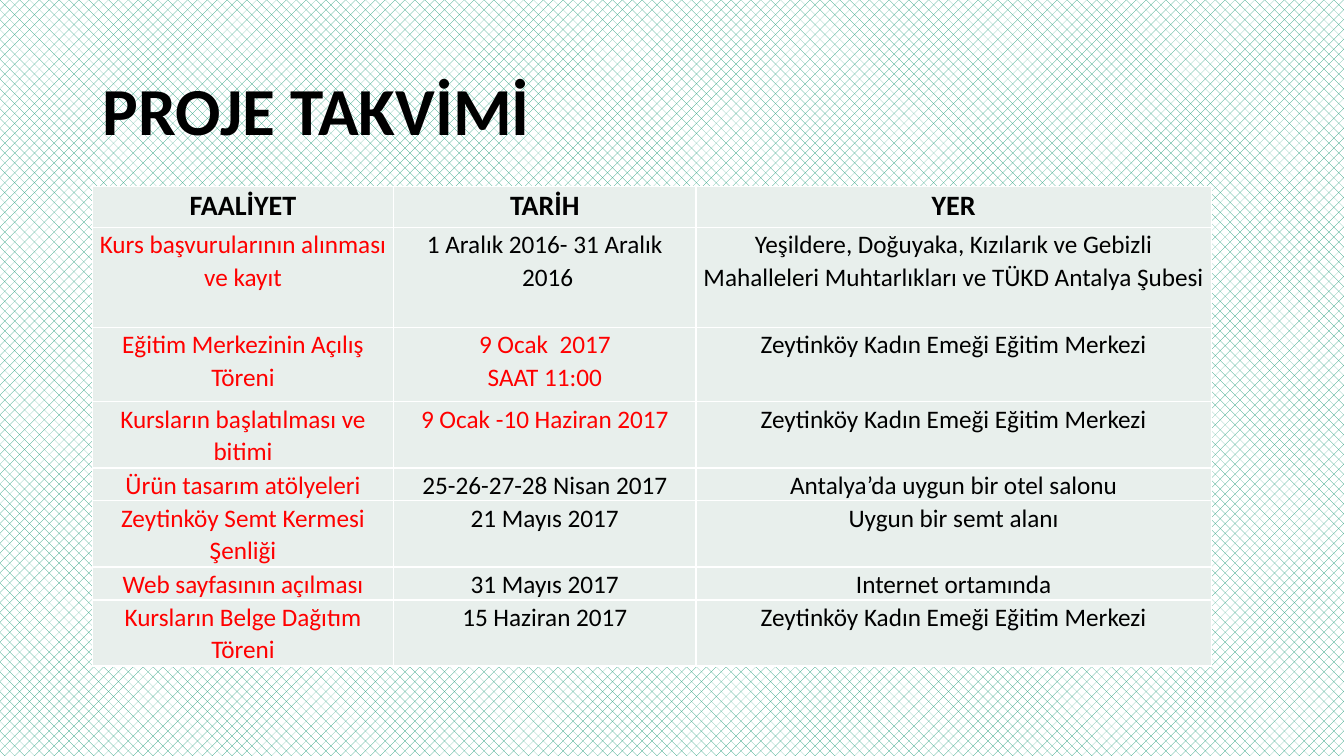
"""Build the project calendar slide with its title and activity table."""
from dataclasses import dataclass

from lxml import etree
from pptx import Presentation
from pptx.dml.color import RGBColor
from pptx.enum.dml import MSO_PATTERN
from pptx.enum.text import MSO_ANCHOR, MSO_AUTO_SIZE, PP_ALIGN
from pptx.oxml.ns import qn
from pptx.util import Pt

CENTER, LEFT = PP_ALIGN.CENTER, PP_ALIGN.LEFT
MIDDLE, NO_FIT = MSO_ANCHOR.MIDDLE, MSO_AUTO_SIZE.NONE
PATTERN = MSO_PATTERN.PERCENT_30
FONT = "Calibri"
COLORS = {
    "text": "000000",
    "highlight": "FF0000",
    "cell": "E8EFEC",
    "border": "FFFFFF",
    "pattern": "1D9A78",
    "paper": "FFFFFF",
}
COLUMN_WIDTHS = (215.2, 216, 368)
HEADERS = ("FAALİYET", "TARİH", "YER")
HEADER_HEIGHT = 29.4
CENTRE_NAME = "Zeytinköy Kadın Emeği Eğitim Merkezi"


@dataclass(frozen=True)
class Activity:
    """One row of the calendar."""

    name: str
    date: str
    place: str
    height: float
    date_color: str = "text"


ACTIVITIES = (
    Activity("Kurs başvurularının alınması ve kayıt", "1 Aralık 2016- 31 Aralık\n 2016",
             "Yeşildere, Doğuyaka, Kızılarık ve Gebizli Mahalleleri Muhtarlıkları "
             "ve TÜKD Antalya Şubesi", 71.3),
    Activity("Eğitim Merkezinin Açılış Töreni", "9 Ocak  2017\nSAAT 11:00",
             CENTRE_NAME, 53.2, "highlight"),
    Activity("Kursların başlatılması ve bitimi", "9 Ocak -10 Haziran 2017",
             CENTRE_NAME, 47.2, "highlight"),
    Activity("Ürün tasarım atölyeleri", "25-26-27-28 Nisan 2017",
             "Antalya’da uygun bir otel salonu", 23.4),
    Activity("Zeytinköy Semt Kermesi Şenliği", "21 Mayıs 2017", "Uygun bir semt alanı", 47.2),
    Activity("Web sayfasının açılması", "31 Mayıs 2017", "Internet ortamında", 23.4),
    Activity("Kursların Belge Dağıtım Töreni", "15 Haziran 2017", CENTRE_NAME, 47.2),
)


def rgb(name: str) -> RGBColor:
    """Return the named colour."""
    return RGBColor.from_string(COLORS[name])


def write_text(text_frame, text: str, *, size: float = 18, color: str = "text",
               bold: bool = False, align=CENTER, spacing: float = 1.07) -> None:
    """Fill a text frame with one formatted paragraph per line."""
    text_frame.text = text
    for paragraph in text_frame.paragraphs:
        paragraph.alignment = align
        paragraph.line_spacing = spacing
        for run in paragraph.runs:
            run.font.name = FONT
            run.font.size = Pt(size)
            run.font.bold = bold
            run.font.color.rgb = rgb(color)


def format_cell(cell) -> None:
    """Set the margins, borders and fill of a table cell."""
    cell.margin_left = cell.margin_right = Pt(5)
    cell.margin_top = cell.margin_bottom = Pt(0)
    properties = cell._tc.get_or_add_tcPr()
    for side in ("a:lnL", "a:lnR", "a:lnT", "a:lnB"):
        border = etree.SubElement(properties, qn(side), w=str(Pt(1)))
        fill = etree.SubElement(border, qn("a:solidFill"))
        etree.SubElement(fill, qn("a:srgbClr"), val=COLORS["border"])
    cell.fill.solid()
    cell.fill.fore_color.rgb = rgb("cell")


def add_title(slide) -> None:
    """Place and fill the slide title."""
    title = slide.shapes.title
    title.left, title.top, title.width, title.height = Pt(66), Pt(28.8), Pt(828), Pt(104.4)
    title.text_frame.auto_size = NO_FIT
    title.text_frame.vertical_anchor = MIDDLE
    write_text(title.text_frame, "PROJE TAKVİMİ", size=48, bold=True, align=LEFT, spacing=0.9)


def add_calendar(slide) -> None:
    """Draw the table of activities."""
    heights = (HEADER_HEIGHT, *(activity.height for activity in ACTIVITIES))
    table = slide.shapes.add_table(
        len(heights), len(HEADERS), Pt(66), Pt(133.2),
        Pt(sum(COLUMN_WIDTHS)), Pt(sum(heights))).table
    table.first_row = table.horz_banding = False
    for column, width in zip(table.columns, COLUMN_WIDTHS):
        column.width = Pt(width)
    for row, height in zip(table.rows, heights):
        row.height = Pt(height)
    for cell in table.iter_cells():
        format_cell(cell)
    for cell, header in zip(table.rows[0].cells, HEADERS):
        write_text(cell.text_frame, header, size=20, bold=True)
    for index, activity in enumerate(ACTIVITIES, start=1):
        name, date, place = table.rows[index].cells
        write_text(name.text_frame, activity.name, color="highlight")
        write_text(date.text_frame, activity.date, color=activity.date_color)
        write_text(place.text_frame, activity.place)


def main() -> None:
    """Create and save the presentation."""
    presentation = Presentation()
    presentation.slide_width, presentation.slide_height = Pt(960), Pt(540)
    slide = presentation.slides.add_slide(presentation.slide_layouts.get_by_name("Title Only"))
    background = slide.background.fill
    background.patterned()
    background.pattern = PATTERN
    background.fore_color.rgb = rgb("pattern")
    background.back_color.rgb = rgb("paper")
    add_title(slide)
    add_calendar(slide)
    presentation.save("out.pptx")


if __name__ == "__main__":
    main()
